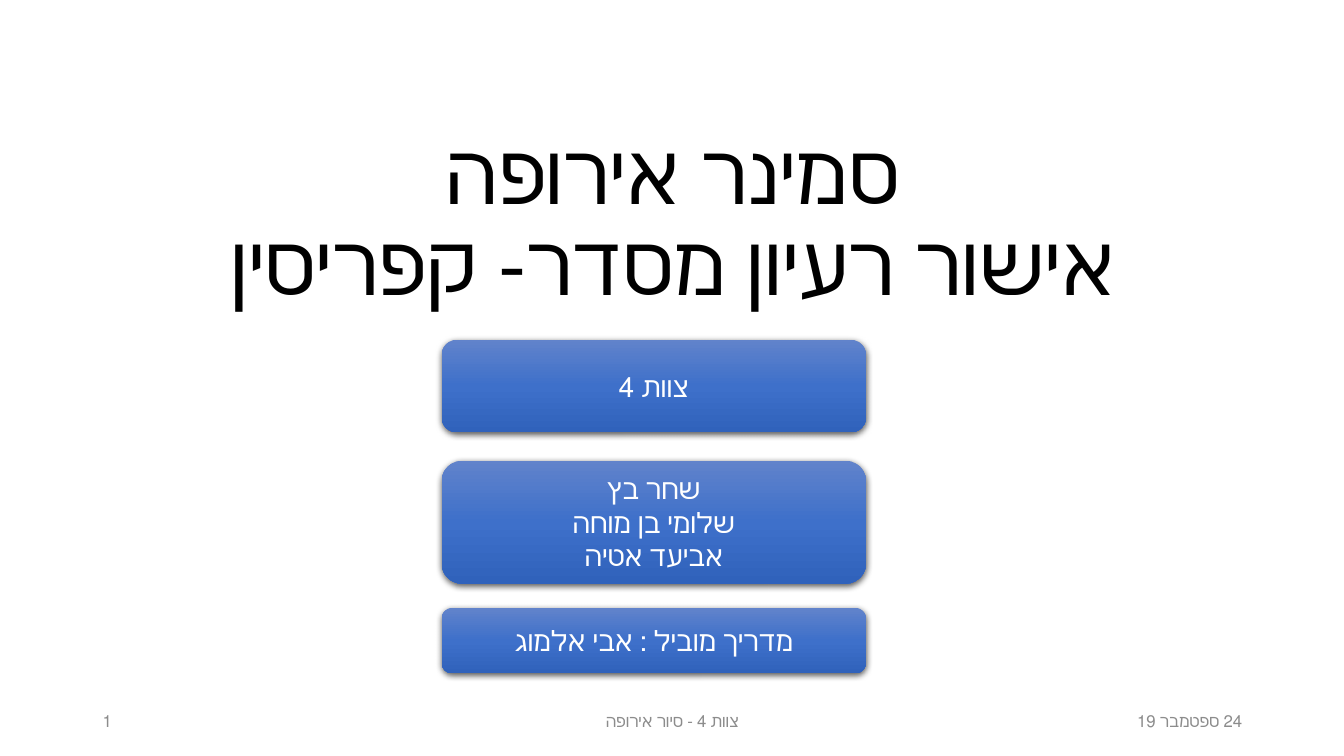
from copy import deepcopy

from lxml import etree
from pptx import Presentation
from pptx import util as u
from pptx.dml.color import RGBColor
from pptx.enum import shapes, text
from pptx.oxml.ns import qn

PX = 9144
GRADIENT = [(0, "6183CB"), (0.5, "3E70CA"), (1, "3062BB")]
CENTER = text.PP_ALIGN.CENTER


def px(*lengths):
    return [u.Emu(length * PX) for length in lengths]


def color(value):
    return RGBColor.from_string(value)


def write(shape, paragraphs, size, font, ink, align=CENTER,
          anchor=text.MSO_ANCHOR.MIDDLE, spacing=None):
    frame = shape.text_frame
    frame.word_wrap = True
    frame.vertical_anchor = anchor
    for index, lines in enumerate(paragraphs):
        paragraph = frame.paragraphs[0] if index == 0 else frame.add_paragraph()
        paragraph.alignment = align
        paragraph.line_spacing = spacing
        paragraph._p.get_or_add_pPr().set("rtl", "1")
        for number, line in enumerate(lines.split("\n")):
            if number:
                paragraph.add_line_break()
            run = paragraph.add_run()
            run.text = line
            run.font.size = u.Pt(size)
            run.font.name = font
            run.font.color.rgb = color(ink)


def add_title(slide, title):
    box = slide.shapes.add_textbox(*px(167, 55, 1000, 261))
    write(box, [title], 60, "Roboto", "000000",
          anchor=text.MSO_ANCHOR.BOTTOM, spacing=0.9)


def add_gradient(shape):
    shape.fill.gradient()
    shape.fill.gradient_angle = 270
    stop_list = shape._element.spPr.find(qn("a:gradFill")).find(qn("a:gsLst"))
    stop_list.append(deepcopy(stop_list[-1]))
    for stop, (position, value) in zip(shape.fill.gradient_stops, GRADIENT):
        stop.position = position
        stop.color.rgb = color(value)


def add_shadow(shape):
    shape.shadow.inherit = False
    effects = shape._element.spPr.find(qn("a:effectLst"))
    shadow = etree.SubElement(
        effects, qn("a:outerShdw"), blurRad=str(u.Pt(4.5)), dist=str(u.Pt(1.5)),
        dir="5400000", algn="ctr", rotWithShape="0")
    shade = etree.SubElement(shadow, qn("a:srgbClr"), val="000000")
    etree.SubElement(shade, qn("a:alpha"), val="63000")


def add_card(slide, top, height, paragraphs):
    card = slide.shapes.add_shape(
        shapes.MSO_SHAPE.ROUNDED_RECTANGLE, *px(438, top, 421, height))
    add_gradient(card)
    card.line.fill.background()
    add_shadow(card)
    write(card, paragraphs, 20, "Calibri", "FFFFFF")


def add_footer(slide, left, width, label, align):
    box = slide.shapes.add_textbox(*px(left, 695, width, 40))
    write(box, [label], 12, "Calibri", "8C8C8C", align)


def main():
    presentation = Presentation()
    presentation.slide_width, presentation.slide_height = px(1333, 750)
    slide = presentation.slides.add_slide(presentation.slide_layouts[6])

    add_title(slide, "סמינר אירופה\nאישור רעיון מסדר- קפריסין")
    add_card(slide, 337, 92, ["צוות 4"])
    add_card(slide, 457, 122, ["שחר בץ", "שלומי בן מוחה", "אביעד אטיה"])
    add_card(slide, 603, 65, ["מדריך מוביל : אבי אלמוג"])
    add_footer(slide, 942, 300, "24 ספטמבר 19", text.PP_ALIGN.RIGHT)
    add_footer(slide, 442, 450, "צוות 4 - סיור אירופה", CENTER)
    add_footer(slide, 92, 300, "1", text.PP_ALIGN.LEFT)

    presentation.save("out.pptx")


if __name__ == "__main__":
    main()
